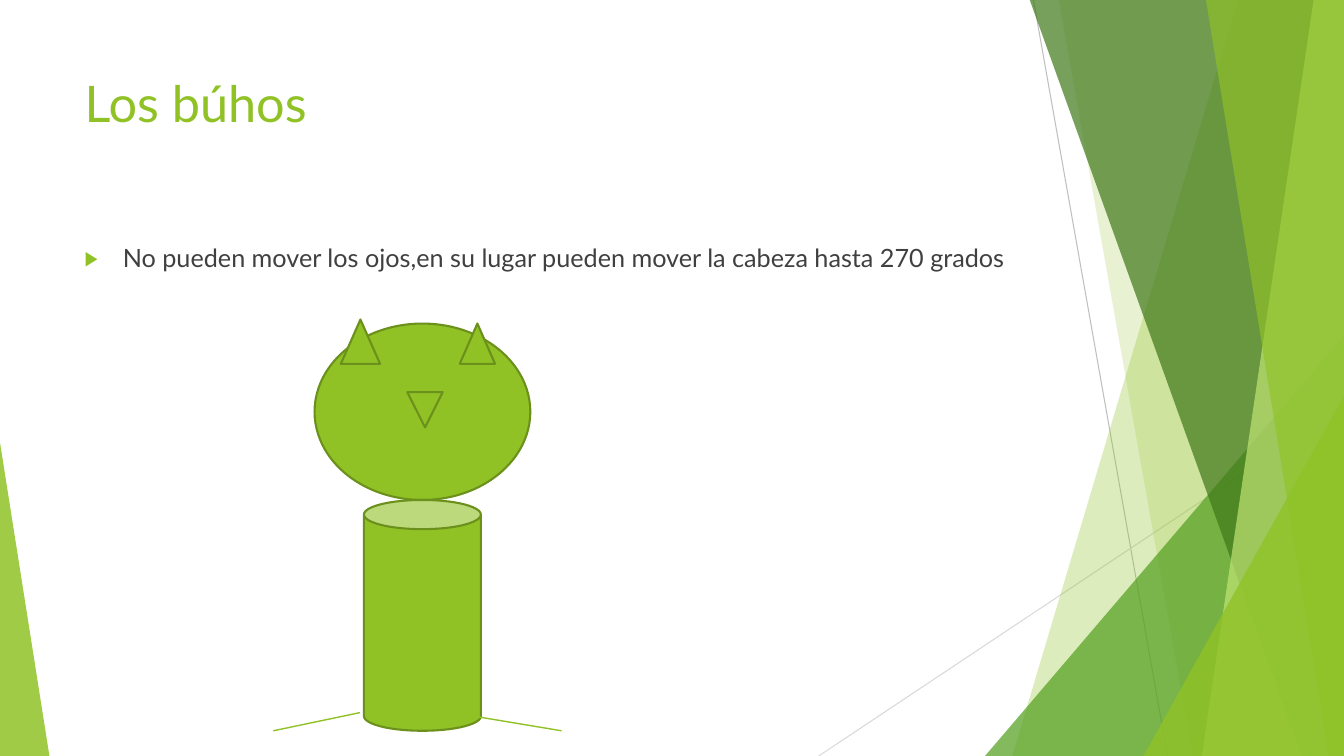
from lxml.etree import SubElement
from pptx import Presentation
from pptx.dml.color import RGBColor
from pptx.enum.shapes import MSO_CONNECTOR, MSO_SHAPE
from pptx.oxml.ns import qn
from pptx.util import Inches, Pt

COLORS = {
    "lime": "90C226",
    "pale": "C0E474",
    "green": "54A021",
    "forest": "3F7819",
    "outline": "6B901C",
    "text": "404040",
    "gray": "BFBFBF",
    "light_gray": "D9D9D9",
}
FONT = "Lato"
TOP, RIGHT, BOTTOM = -0.01, 13.33, 7.5


def rgb(name):
    """Return the named palette colour."""
    return RGBColor.from_string(COLORS[name])


def paint(sp, color, alpha=100, outline=None):
    """Give a shape its fill, opacity in percent and outline."""
    sp.shadow.inherit = False
    sp.fill.solid()
    sp.fill.fore_color.rgb = rgb(color)
    if alpha < 100:
        clr = sp._element.spPr.find(qn("a:solidFill"))[0]
        SubElement(clr, qn("a:alpha"), val=str(alpha * 1000))
    if outline:
        sp.line.color.rgb = rgb(outline)
        sp.line.width = Pt(1.5)
    else:
        sp.line.fill.background()


def add_line(s, start, end, color, width):
    """Draw a straight line between two points."""
    ends = [Inches(v) for v in (*start, *end)]
    line = s.shapes.add_connector(MSO_CONNECTOR.STRAIGHT, *ends)
    line.line.color.rgb = rgb(color)
    line.line.width = Pt(width)
    SubElement(line._element.spPr, qn("a:effectLst"))


def add_band(s, top_x, bottom_x, color, alpha):
    """Draw a slanted band reaching to the right edge of the slide."""
    points = [(RIGHT, TOP), (RIGHT, BOTTOM), (bottom_x, BOTTOM)]
    band = s.shapes.build_freeform(Inches(top_x), Inches(TOP))
    band.add_line_segments([(Inches(x), Inches(y)) for x, y in points])
    paint(band.convert_to_shape(), color, alpha)


def add_corner(s, box, apex, color, alpha):
    """Draw a right triangle in a corner of the slide."""
    sp = s.shapes.add_shape(MSO_SHAPE.ISOSCELES_TRIANGLE, *map(Inches, box))
    sp.adjustments[0] = apex
    paint(sp, color, alpha)


def add_owl_part(s, kind, box, rotation=0):
    """Draw one outlined part of the owl."""
    sp = s.shapes.add_shape(kind, *map(Inches, box))
    sp.rotation = rotation
    paint(sp, "lime", outline="outline")


def add_text(s, box, text, size, color):
    """Add a text box with one run and return its paragraph."""
    tf = s.shapes.add_textbox(*map(Inches, box)).text_frame
    tf.word_wrap = True
    p = tf.paragraphs[0]
    r = p.add_run()
    r.text = text
    r.font.name = FONT
    r.font.size = Pt(size)
    r.font.color.rgb = rgb(color)
    return p


def add_bullet(p):
    """Turn a paragraph into a bullet with a hanging indent."""
    p.space_before = Pt(10)
    pPr = p._p.get_or_add_pPr()
    pPr.set("marL", str(Inches(0.38)))
    pPr.set("indent", str(Inches(-0.38)))
    SubElement(SubElement(pPr, qn("a:buClr")), qn("a:srgbClr"), val=COLORS["lime"])
    SubElement(pPr, qn("a:buSzPct"), val="80000")
    SubElement(pPr, qn("a:buFont"), typeface=FONT)
    SubElement(pPr, qn("a:buChar"), char="▶")


def add_backdrop(s):
    """Draw the green facets along the slide edges."""
    add_line(s, (10.25, 0), (11.58, BOTTOM), "gray", 0.75)
    add_line(s, (RIGHT, 4.03), (8.12, BOTTOM), "light_gray", 0.75)
    add_band(s, 12.28, 10.04, "lime", 30)
    add_band(s, 10.5, 11.83, "lime", 20)
    add_corner(s, (9.77, 3.33, 3.56, 4.17), 1, "green", 72)
    add_band(s, 10.21, 12.91, "forest", 70)
    add_band(s, 13.03, 11.92, "pale", 70)
    add_band(s, 11.96, 13.18, "lime", 65)
    add_corner(s, (11.34, 3.93, 1.99, 3.57), 1, "lime", 80)
    add_corner(s, (0, 4.39, 0.49, 3.11), 0, "lime", 85)


def add_owl(s):
    """Draw the owl from head to feet."""
    triangle = MSO_SHAPE.ISOSCELES_TRIANGLE
    add_owl_part(s, MSO_SHAPE.OVAL, (3.12, 3.21, 2.14, 1.75))
    add_owl_part(s, triangle, (4.56, 3.21, 0.35, 0.4))
    add_owl_part(s, triangle, (3.38, 3.17, 0.39, 0.44))
    add_owl_part(s, MSO_SHAPE.CAN, (3.61, 4.96, 1.16, 2.29))
    add_owl_part(s, triangle, (4.04, 3.89, 0.35, 0.35), 180)
    add_line(s, (4.73, 7.11), (5.57, 7.25), "lime", 1)
    add_line(s, (3.57, 7.07), (2.71, 7.25), "lime", 1)


def main():
    """Build the slide and save it."""
    prs = Presentation()
    prs.slide_width = Inches(13.33)
    prs.slide_height = Inches(7.5)
    s = prs.slides.add_slide(prs.slide_layouts[6])
    add_backdrop(s)
    add_text(s, (0.74, 0.67, 9.4, 1.44), "Los búhos", 36, "lime")
    fact = "No pueden mover los ojos,en su lugar pueden mover la cabeza hasta 270 grados"
    add_bullet(add_text(s, (0.74, 2.36, 9.4, 4.24), fact, 18, "text"))
    add_owl(s)
    prs.save("out.pptx")


if __name__ == "__main__":
    main()
